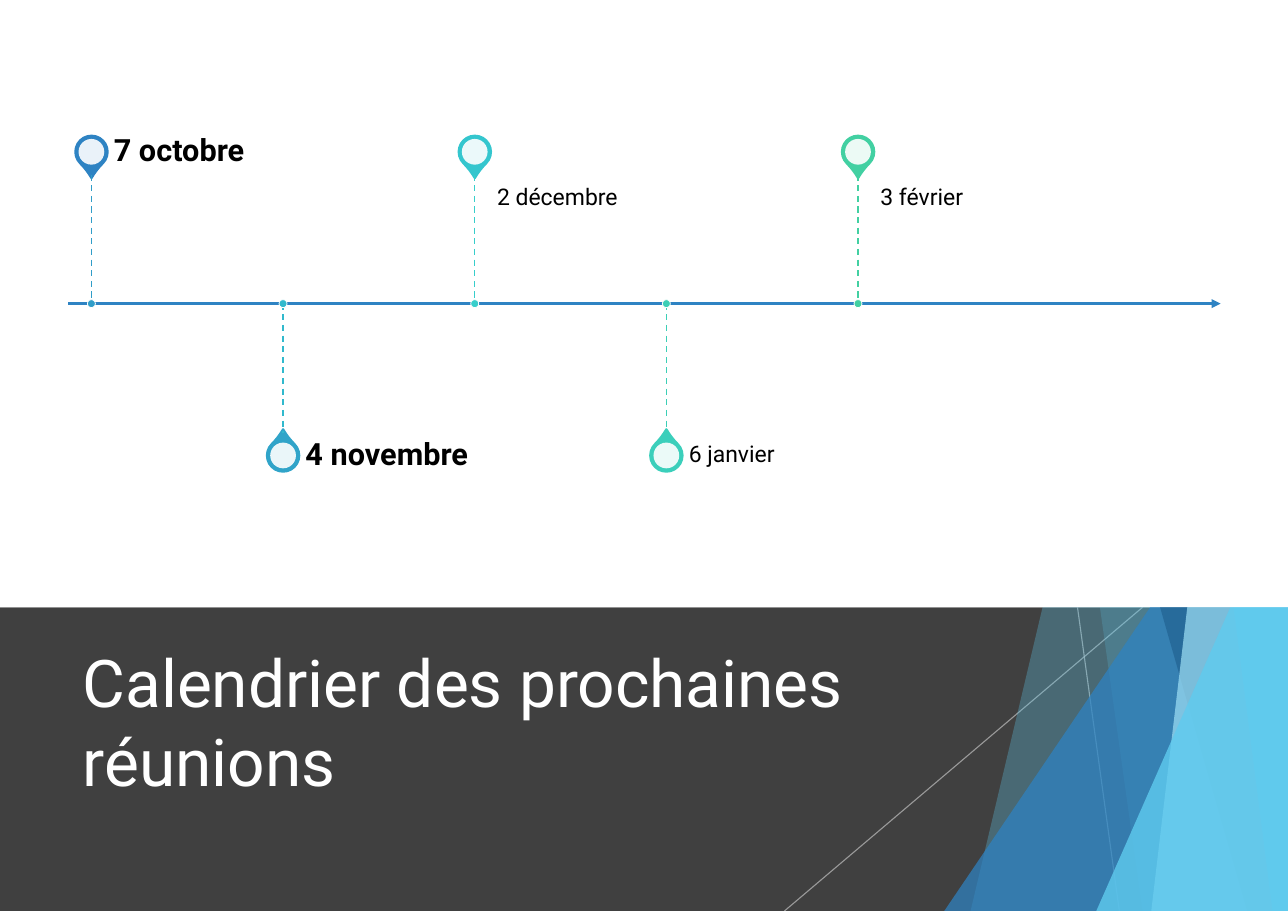
from lxml.etree import SubElement
from pptx import Presentation
from pptx.dml.color import RGBColor
from pptx.enum.dml import MSO_LINE
from pptx.enum.shapes import MSO_CONNECTOR, MSO_SHAPE
from pptx.enum.text import MSO_ANCHOR, MSO_AUTO_SIZE, PP_ALIGN
from pptx.oxml.ns import qn
from pptx.util import Inches, Pt

WIDE, HIGH = Inches(11.69), Inches(8.27)
COLS, ROWS = 100, 6
AXIS, SPLIT = 2, 4
START, STEP = 7.1, 14.88
STEM, PIN, HOLE, DOT = 0.85, 2.5, 2, 0.62

BLACK = RGBColor(0x00, 0x00, 0x00)
WHITE = RGBColor(0xFF, 0xFF, 0xFF)
DARK = RGBColor(0x40, 0x40, 0x40)
GREY = RGBColor(0xBF, 0xBF, 0xBF)
SKY = RGBColor(0x5F, 0xCB, 0xEF)
PALE = RGBColor(0x9F, 0xE0, 0xF5)
BLUE = RGBColor(0x2E, 0x83, 0xC3)
NAVY = RGBColor(0x22, 0x62, 0x92)
STEEL = RGBColor(0x30, 0x9D, 0xC8)
AZURE = RGBColor(0x30, 0xA4, 0xC9)
TEAL = RGBColor(0x31, 0xB9, 0xCD)
CYAN = RGBColor(0x34, 0xC6, 0xCE)
AQUA = RGBColor(0x37, 0xCE, 0xCB)
MINT = RGBColor(0x3B, 0xCF, 0xBB)
JADE = RGBColor(0x3C, 0xCF, 0xB6)
GREEN = RGBColor(0x42, 0xD0, 0xA2)

DATES = [
    ("7 octobre", BLUE, STEEL, True, False),
    ("4 novembre", AZURE, TEAL, True, False),
    ("2 décembre", CYAN, AQUA, False, True),
    ("6 janvier", MINT, JADE, False, False),
    ("3 février", GREEN, GREEN, False, True),
]


def col(num):
    return round(WIDE * num / COLS)


def row(num):
    return round(HIGH * num / ROWS)


def fade(shape, share):
    for tint in shape.element.iter(qn("a:srgbClr")):
        SubElement(tint, qn("a:alpha"), val=str(share * 1000))


def paint(shape, fill, share=100, edge=None, width=1):
    shape.shadow.inherit = False
    shape.fill.solid()
    shape.fill.fore_color.rgb = fill
    if share < 100:
        fade(shape, share)
    if edge is None:
        shape.line.fill.background()
    else:
        shape.line.color.rgb = edge
        shape.line.width = Pt(width)


def block(slide, kind, left, top, wide, high, fill, share=100):
    shape = slide.shapes.add_shape(kind, col(left), row(top), col(wide), row(high))
    paint(shape, fill, share)
    return shape


def disc(slide, kind, x, y, size, fill, **style):
    side = col(size)
    shape = slide.shapes.add_shape(
        kind, col(x) - side // 2, row(y) - side // 2, side, side)
    paint(shape, fill, **style)
    return shape


def shard(slide, top, base, fill, share):
    form = slide.shapes.build_freeform(col(top), 0)
    form.add_line_segments([(WIDE, 0), (WIDE, HIGH), (col(base), HIGH)])
    paint(form.convert_to_shape(), fill, share)


def wedge(slide, left, top, fill, share):
    shape = block(slide, MSO_SHAPE.ISOSCELES_TRIANGLE, left, top,
                  COLS - left, ROWS - top, fill, share)
    shape.adjustments[0] = 1


def rule(slide, x1, y1, x2, y2, color, width, dash=False, arrow=False, share=100):
    line = slide.shapes.add_connector(
        MSO_CONNECTOR.STRAIGHT, col(x1), row(y1), col(x2), row(y2))
    line.line.color.rgb = color
    line.line.width = Pt(width)
    if dash:
        line.line.dash_style = MSO_LINE.DASH
    if share < 100:
        fade(line, share)
    props = line.element.spPr
    if arrow:
        SubElement(props.find(qn("a:ln")), qn("a:tailEnd"), type="triangle")
    SubElement(props, qn("a:effectLst"))


def write(shape, text, size, color, bold=False, anchor=MSO_ANCHOR.MIDDLE,
          inset=(7.2, 3.6, 7.2, 3.6), space=1.0):
    frame = shape.text_frame
    frame.word_wrap = True
    frame.auto_size = MSO_AUTO_SIZE.NONE
    frame.vertical_anchor = anchor
    (frame.margin_left, frame.margin_top,
     frame.margin_right, frame.margin_bottom) = map(Pt, inset)
    para = frame.paragraphs[0]
    para.alignment = PP_ALIGN.LEFT
    para.line_spacing = space
    run = para.add_run()
    run.text = text
    run.font.name = "Roboto"
    run.font.size = Pt(size)
    run.font.bold = bold
    run.font.color.rgb = color


def label(slide, x, top, high, text, **style):
    box = slide.shapes.add_textbox(col(x), row(top), col(24.8), row(high))
    write(box, text, color=BLACK, space=0.9, **style)


def banner(slide):
    block(slide, MSO_SHAPE.RECTANGLE, 0, SPLIT, COLS, ROWS - SPLIT, DARK)
    rule(slide, 83.66, SPLIT, 86.91, ROWS, GREY, 0.75, share=70)
    rule(slide, 88.71, SPLIT, 60.91, ROWS, GREY, 0.75, share=70)
    shard(slide, 92.13, 75.36, SKY, 30)
    shard(slide, 78.79, 88.71, SKY, 20)
    wedge(slide, 73.31, 2.66, BLUE, 72)
    shard(slide, 76.56, 96.83, NAVY, 70)
    shard(slide, 97.78, 89.39, PALE, 70)
    shard(slide, 89.73, 98.8, SKY, 65)
    wedge(slide, 85.12, 3.14, SKY, 80)


def heading(slide, text):
    title = slide.shapes.title
    title.left, title.top = col(5.56), row(4.17)
    title.width, title.height = col(70.5), row(1.15)
    write(title, text, 43, WHITE)
    title.element.getparent().append(title.element)


def stage(slide, index, text, tone, dot, bold, low):
    x = START + index * STEP
    side = 1 if index % 2 else -1
    y = AXIS + side
    pin = disc(slide, MSO_SHAPE.TEAR, x, y, PIN, tone, edge=tone, width=1.5)
    pin.adjustments[0] = 1.15
    pin.rotation = 315 if side > 0 else 135
    disc(slide, MSO_SHAPE.OVAL, x, y, HOLE, WHITE, share=90)
    if low:
        label(slide, x + 1.74, AXIS - STEM, STEM, text, size=15,
              anchor=MSO_ANCHOR.TOP, inset=(0, 7.2, 7.2, 11.5))
    else:
        label(slide, x + 1.74, y - 0.15, 0.3, text, size=20 if bold else 15,
              bold=bold, inset=(0, 0, 7.2, 0))
    ends = sorted([AXIS, AXIS + side * STEM])
    rule(slide, x, ends[0], x, ends[1], dot, 1, dash=True)
    disc(slide, MSO_SHAPE.OVAL, x, AXIS, DOT, dot, edge=WHITE, width=0.5)


def main():
    deck = Presentation()
    deck.slide_width, deck.slide_height = WIDE, HIGH
    slide = deck.slides.add_slide(deck.slide_layouts[5])
    banner(slide)
    heading(slide, "Calendrier des prochaines réunions")
    block(slide, MSO_SHAPE.RECTANGLE, 0, 0, COLS, SPLIT, WHITE)
    rule(slide, 5.3, AXIS, 94.78, AXIS, BLUE, 1.5, arrow=True)
    for index, date in enumerate(DATES):
        stage(slide, index, *date)
    deck.save("out.pptx")


if __name__ == "__main__":
    main()
